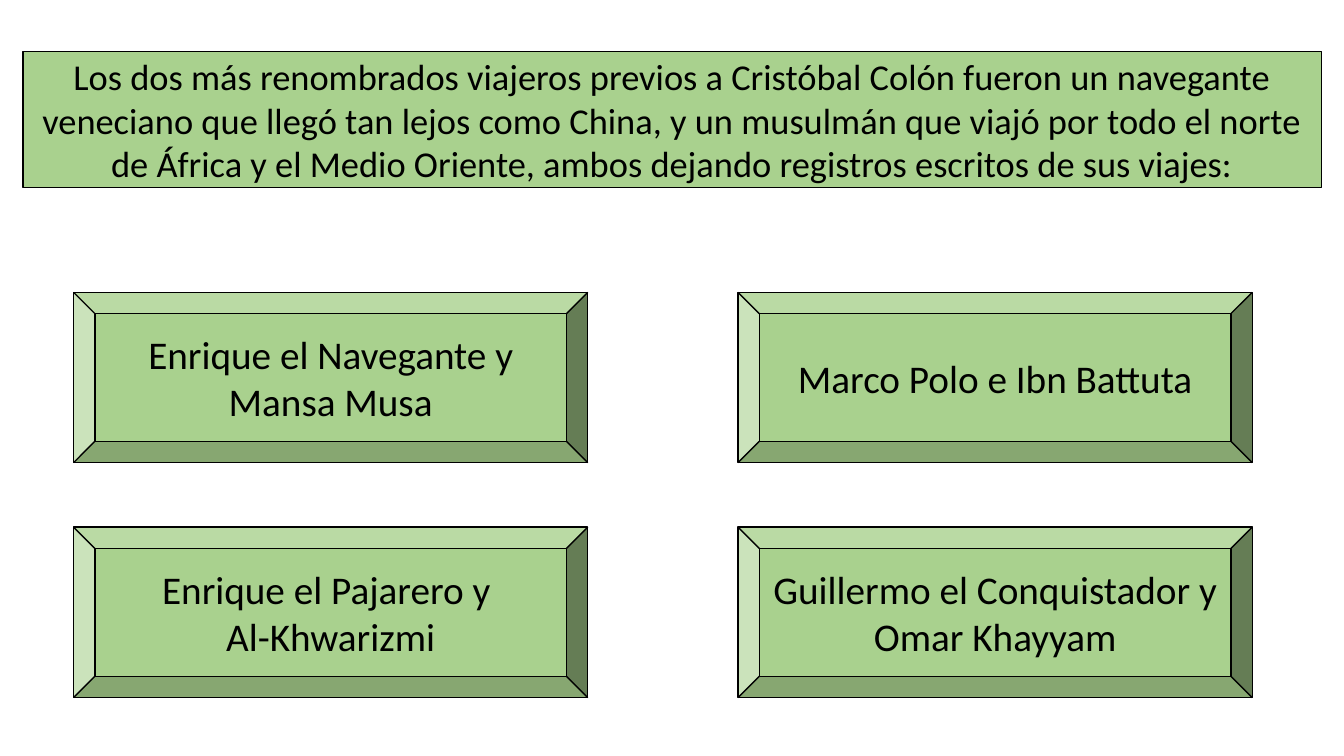
import pptx
import pptx.util
import pptx.dml.color
import pptx.enum.shapes
import pptx.enum.text

QUESTION = "Los dos más renombrados viajeros previos a Cristóbal Colón fueron un navegante veneciano que llegó tan lejos como China, y un musulmán que viajó por todo el norte de África y el Medio Oriente, ambos dejando registros escritos de sus viajes:"
ANSWERS = [
    ["Enrique el Navegante y Mansa Musa", "Marco Polo e Ibn Battuta"],
    ["Enrique el Pajarero y \nAl-Khwarizmi", "Guillermo el Conquistador y Omar Khayyam"],
]

GREEN = pptx.dml.color.RGBColor(0xA9, 0xD1, 0x8E)
BLACK = pptx.dml.color.RGBColor(0, 0, 0)
FONT = "Calibri"
ANSWER_LEFT, ANSWER_TOP = 0.73, 2.9
ANSWER_WIDTH, ANSWER_HEIGHT = 5.1, 1.69
COLUMN_STEP, ROW_STEP = 6.59, 2.33

Inches = pptx.util.Inches
SHAPES = pptx.enum.shapes.MSO_SHAPE


def add_box(slide, text, *, kind, left, top, width, height, size):
    shape = slide.shapes.add_shape(
        kind, Inches(left), Inches(top), Inches(width), Inches(height)
    )
    shape.shadow.inherit = False
    shape.fill.solid()
    shape.fill.fore_color.rgb = GREEN
    shape.line.color.rgb = BLACK
    shape.line.width = pptx.util.Pt(1)
    frame = shape.text_frame
    frame.word_wrap = True
    frame.vertical_anchor = pptx.enum.text.MSO_ANCHOR.MIDDLE
    frame.text = text
    for paragraph in frame.paragraphs:
        paragraph.alignment = pptx.enum.text.PP_ALIGN.CENTER
        for run in paragraph.runs:
            run.font.name = FONT
            run.font.size = pptx.util.Pt(size)
            run.font.color.rgb = BLACK


def main():
    presentation = pptx.Presentation()
    presentation.slide_width = Inches(13.33)
    presentation.slide_height = Inches(7.5)
    slide = presentation.slides.add_slide(presentation.slide_layouts[6])

    add_box(slide, QUESTION, kind=SHAPES.RECTANGLE,
            left=0.23, top=0.51, width=12.88, height=1.35, size=26)
    for row, answers in enumerate(ANSWERS):
        for column, answer in enumerate(answers):
            add_box(slide, answer, kind=SHAPES.BEVEL,
                    left=ANSWER_LEFT + column * COLUMN_STEP,
                    top=ANSWER_TOP + row * ROW_STEP,
                    width=ANSWER_WIDTH, height=ANSWER_HEIGHT, size=28)

    presentation.save("out.pptx")


if __name__ == "__main__":
    main()
